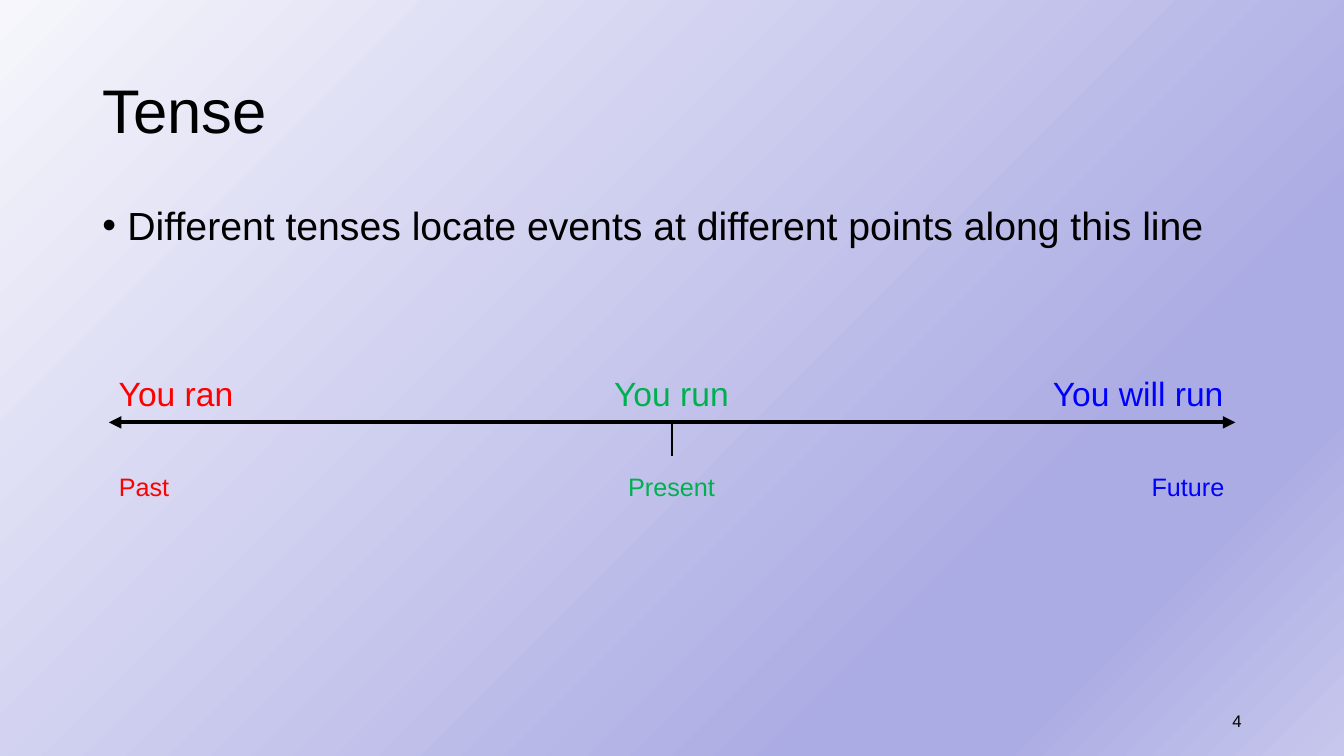
from dataclasses import dataclass

from lxml.etree import SubElement
from pptx import Presentation
from pptx.dml.color import RGBColor as RGB
from pptx.enum.shapes import MSO_CONNECTOR as Conn
from pptx.enum.text import MSO_ANCHOR as Anchor, PP_ALIGN as Align
from pptx.oxml.ns import qn
from pptx.slide import Slide
from pptx.text.text import _Paragraph as Paragraph
from pptx.util import Pt


@dataclass(frozen=True)
class Theme:
    font: str = "Arial"
    ink: str = "000000"
    past: str = "FF0000"
    present: str = "00B050"
    future: str = "0000FF"
    title: int = 44
    body: int = 28
    example: int = 24
    label: int = 18
    number: int = 12
    backdrop: tuple[tuple[int, str], ...] = (
        (0, "F6F6FC"), (74, "ACACE4"), (83, "ACACE4"), (100, "C7C7ED"))


@dataclass(frozen=True)
class Box:
    left: float
    top: float
    width: float
    height: float


@dataclass(frozen=True)
class Tense:
    example: str
    example_width: float
    name: str
    name_width: float
    color: str
    position: float


THEME = Theme()
LINE_LEFT, LINE_RIGHT, LINE_Y = 77.75, 882.5, 301.7
TICK_X, TICK_LENGTH = 480, 23.8
EXAMPLE_TOP, EXAMPLE_HEIGHT = 262.8, 36
NAME_TOP, NAME_HEIGHT = 333.4, 29
TENSES = (
    Tense("You ran", 97, "Past", 51, THEME.past, 0),
    Tense("You run", 97, "Present", 77, THEME.present, 0.5),
    Tense("You will run", 137.5, "Future", 67, THEME.future, 1),
)


def paint_background(s: Slide) -> None:
    fill = s.background.fill
    fill.gradient()
    fill.gradient_angle = 315
    stops = s.element.find(".//" + qn("a:gsLst"))
    stops.clear()
    for percent, color in THEME.backdrop:
        stop = SubElement(stops, qn("a:gs"), pos=str(percent * 1000))
        SubElement(stop, qn("a:srgbClr"), val=color)


def add_text(s: Slide, box: Box, text: str, size: int, color: str = THEME.ink,
             anchor: Anchor = Anchor.TOP, align: Align = Align.LEFT,
             wrap: bool = True) -> Paragraph:
    sp = s.shapes.add_textbox(
        Pt(box.left), Pt(box.top), Pt(box.width), Pt(box.height))
    tf = sp.text_frame
    tf.word_wrap = wrap
    tf.vertical_anchor = anchor
    p = tf.paragraphs[0]
    p.text = text
    p.alignment = align
    p.font.name = THEME.font
    p.font.size = Pt(size)
    p.font.color.rgb = RGB.from_string(color)
    return p


def add_bullet(p: Paragraph, indent: float) -> None:
    props = p._p.get_or_add_pPr()
    props.set("marL", str(Pt(indent)))
    props.set("indent", str(-Pt(indent)))
    SubElement(props, qn("a:buFont"), typeface=THEME.font)
    SubElement(props, qn("a:buChar"), char="•")


def add_line(s: Slide, x1: float, y1: float, x2: float, y2: float,
             weight: float, arrows: bool = False) -> None:
    line = s.shapes.add_connector(
        Conn.STRAIGHT, Pt(x1), Pt(y1), Pt(x2), Pt(y2))
    line.line.color.rgb = RGB.from_string(THEME.ink)
    line.line.width = Pt(weight)
    if arrows:
        for end in ("a:headEnd", "a:tailEnd"):
            SubElement(line.line._get_or_add_ln(), qn(end), type="triangle")
    SubElement(line._element.spPr, qn("a:effectLst"))


def add_tense(s: Slide, tense: Tense) -> None:
    for text, width, top, height, size in (
        (tense.example, tense.example_width, EXAMPLE_TOP, EXAMPLE_HEIGHT, THEME.example),
        (tense.name, tense.name_width, NAME_TOP, NAME_HEIGHT, THEME.label),
    ):
        left = LINE_LEFT + (LINE_RIGHT - LINE_LEFT - width) * tense.position
        add_text(s, Box(left, top, width, height), text, size, tense.color, wrap=False)


def main() -> None:
    prs = Presentation()
    prs.slide_width, prs.slide_height = Pt(960), Pt(540)
    s = prs.slides.add_slide(prs.slide_layouts[6])
    paint_background(s)

    title = add_text(s, Box(66, 28.75, 828, 104.4), "Tense", THEME.title,
                     anchor=Anchor.MIDDLE)
    title.line_spacing = 0.9

    body = add_text(s, Box(66, 143.75, 828, 67), "Different tenses locate events "
                    "at different points along this line", THEME.body)
    body.line_spacing = 0.9
    body.space_before = Pt(10)
    add_bullet(body, 18)

    add_text(s, Box(678, 500.5, 216, 28.75), "4", THEME.number,
             anchor=Anchor.MIDDLE, align=Align.RIGHT)

    add_line(s, LINE_LEFT, LINE_Y, LINE_RIGHT, LINE_Y, 3, arrows=True)
    add_line(s, TICK_X, LINE_Y, TICK_X, LINE_Y + TICK_LENGTH, 2)
    for tense in TENSES:
        add_tense(s, tense)

    prs.save("out.pptx")


if __name__ == "__main__":
    main()
